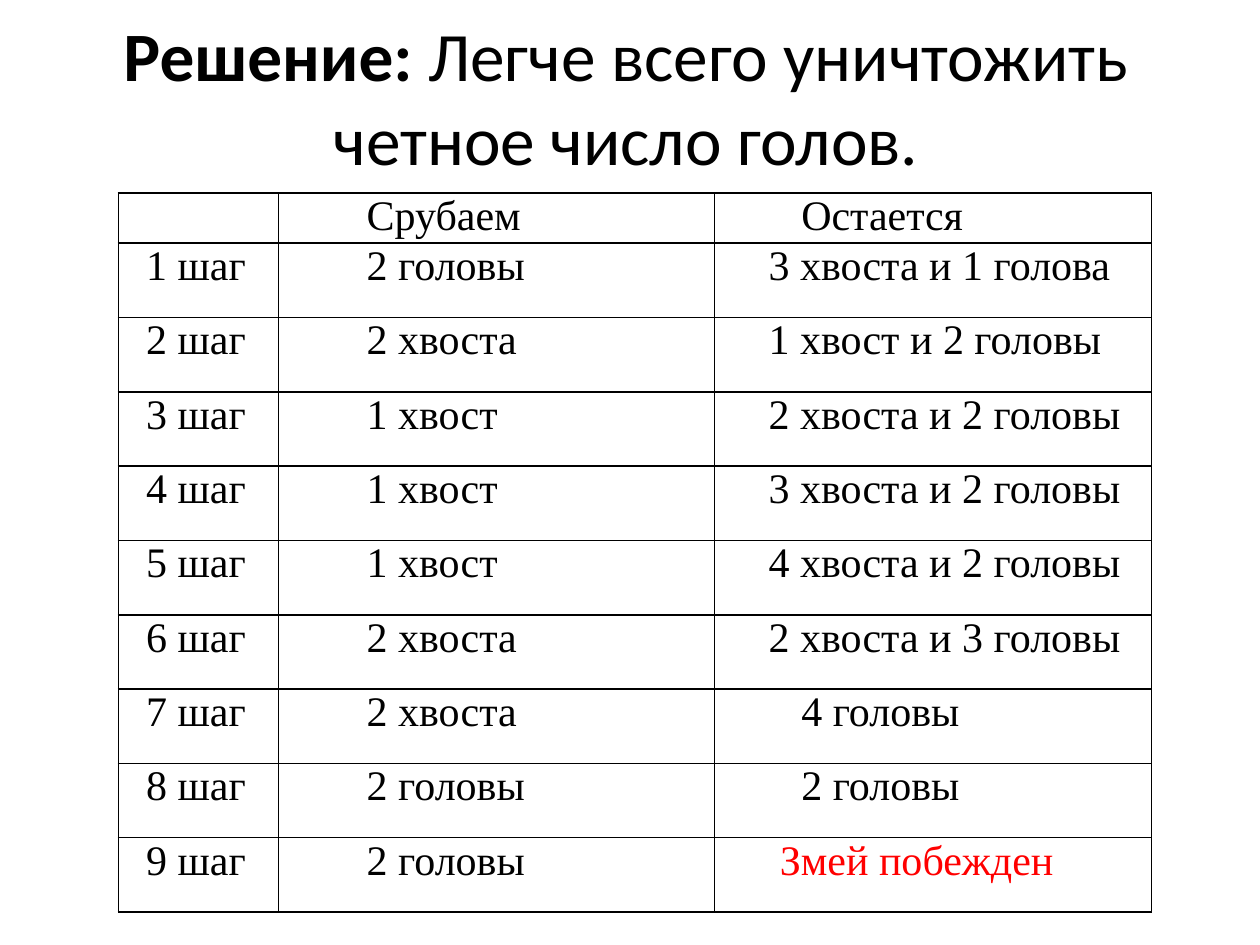
from pptx import Presentation
from pptx.dml.color import RGBColor
from pptx.enum.text import MSO_ANCHOR, PP_ALIGN
from pptx.oxml import parse_xml
from pptx.oxml.ns import nsdecls
from pptx.util import Inches, Pt

BLACK = RGBColor(0x00, 0x00, 0x00)
WHITE = RGBColor(0xFF, 0xFF, 0xFF)
RED = RGBColor(0xFF, 0x00, 0x00)

STEPS = [
    ("2 головы", "3 хвоста и 1 голова"),
    ("2 хвоста", "1 хвост и 2 головы"),
    ("1 хвост", "2 хвоста и 2 головы"),
    ("1 хвост", "3 хвоста и 2 головы"),
    ("1 хвост", "4 хвоста и 2 головы"),
    ("2 хвоста", "2 хвоста и 3 головы"),
    ("2 хвоста", "4 головы"),
    ("2 головы", "2 головы"),
    ("2 головы", "Змей побежден"),
]
ROWS = [("", "Срубаем", "Остается")]
ROWS += [(f"{number} шаг", *step) for number, step in enumerate(STEPS, 1)]
COLUMN_WIDTHS = (1.27, 3.46, 3.47)
HEADER_HEIGHT = 0.37
STEP_HEIGHT = 0.59
VICTORY = "Змей побежден"
REMAINDER_INDENTS = {"Остается": 0.68, "4 головы": 0.68, "2 головы": 0.68, VICTORY: 0.51}


def add_borders(cell):
    properties = cell._tc.get_or_add_tcPr()
    for side in ("lnL", "lnR", "lnT", "lnB"):
        properties.append(parse_xml(
            f'<a:{side} {nsdecls("a")} w="{Pt(1)}"><a:solidFill>'
            f'<a:srgbClr val="{BLACK}"/></a:solidFill></a:{side}>'
        ))


deck = Presentation()
deck.slide_width = Inches(10)
deck.slide_height = Inches(7.5)
page = deck.slides.add_slide(deck.slide_layouts[6])

title_box = page.shapes.add_textbox(Inches(0.47), Inches(0.47), Inches(9), Inches(1.25))
title_frame = title_box.text_frame
title_frame.word_wrap = True
title_frame.vertical_anchor = MSO_ANCHOR.MIDDLE
title_frame.margin_bottom = Inches(0.72)
title = title_frame.paragraphs[0]
title.alignment = PP_ALIGN.CENTER
for text, bold in (("Решение:", True), (" Легче всего уничтожить четное число голов.", False)):
    span = title.add_run()
    span.text = text
    span.font.name = "Calibri"
    span.font.size = Pt(39.6)
    span.font.bold = bold
    span.font.color.rgb = BLACK

table = page.shapes.add_table(
    len(ROWS), len(COLUMN_WIDTHS), Inches(0.94), Inches(1.53),
    Inches(sum(COLUMN_WIDTHS)), Inches(HEADER_HEIGHT + STEP_HEIGHT * len(STEPS)),
).table
table.first_row = False
table.horz_banding = False
for column, width in zip(table.columns, COLUMN_WIDTHS):
    column.width = Inches(width)

for row_index, texts in enumerate(ROWS):
    table.rows[row_index].height = Inches(STEP_HEIGHT if row_index else HEADER_HEIGHT)
    indents = (0.21, 0.69, REMAINDER_INDENTS.get(texts[2], 0.42))
    for column_index, (text, indent) in enumerate(zip(texts, indents)):
        cell = table.cell(row_index, column_index)
        cell.margin_left = cell.margin_right = Inches(0.01)
        cell.margin_top = cell.margin_bottom = 0
        add_borders(cell)
        cell.fill.solid()
        cell.fill.fore_color.rgb = WHITE
        para = cell.text_frame.paragraphs[0]
        para.text = text
        para._p.get_or_add_pPr().set("marL", str(Inches(indent)))
        for span in para.runs:
            span.font.name = "Times New Roman"
            span.font.size = Pt(24)
            span.font.color.rgb = RED if text == VICTORY else BLACK

deck.save("out.pptx")
